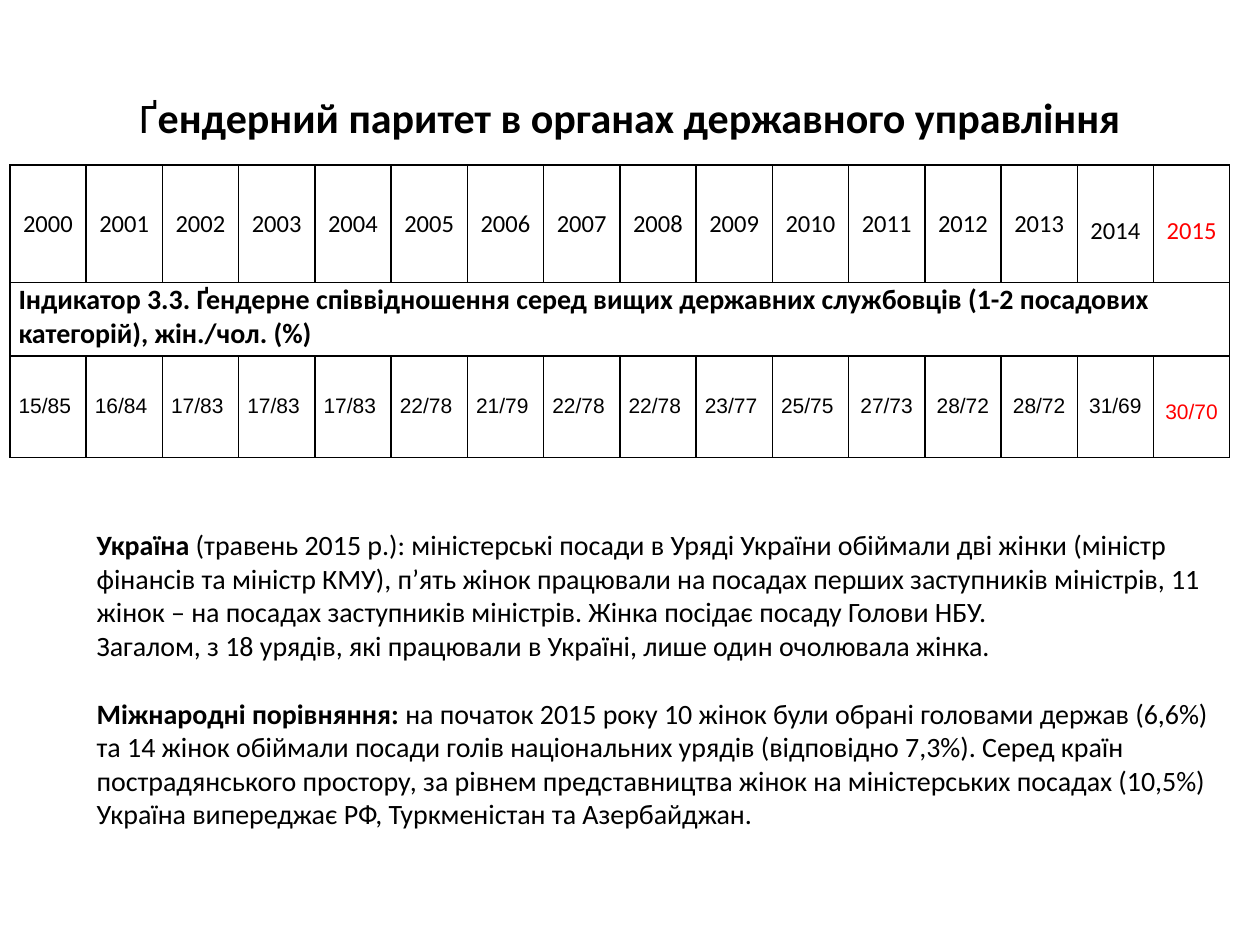
from pptx import Presentation
from pptx.dml.color import RGBColor
from pptx.enum.text import MSO_ANCHOR, MSO_AUTO_SIZE, PP_ALIGN
from pptx.oxml.ns import qn
from pptx.util import Pt
from lxml import etree

LEFT, MID = PP_ALIGN.LEFT, PP_ALIGN.CENTER
TOP, MIDDLE = MSO_ANCHOR.TOP, MSO_ANCHOR.MIDDLE
FIT = MSO_AUTO_SIZE.SHAPE_TO_FIT_TEXT


class Theme:
    font, data_font = "Calibri", "Arial"
    ink, accent = RGBColor(0, 0, 0), RGBColor(255, 0, 0)
    title, body, year, data = 24, 16, 14, 12


# Content: runs are (text, bold)
TITLE = [("Ґ", False), ("ендерний паритет в органах державного управління", True)]
YEARS = [str(year) for year in range(2000, 2016)]
BAND = ("Індикатор 3.3. Ґендерне співвідношення серед вищих державних службовців "
        "(1-2 посадових категорій), жін./чол. (%)")
RATIOS = ["15/85", "16/84", "17/83", "17/83", "17/83", "22/78", "21/79", "22/78",
          "22/78", "23/77", "25/75", "27/73", "28/72", "28/72", "31/69", "30/70"]
# Paragraphs: (runs, space after)
BODY = [
    ([("Україна", True),
      (" (травень 2015 р.): міністерські посади в Уряді України обіймали дві жінки "
       "(міністр фінансів та міністр КМУ), п’ять жінок працювали на посадах перших "
       "заступників міністрів, 11 жінок – на посадах заступників міністрів. "
       "Жінка посідає посаду Голови НБУ.", False)], 0),
    ([("Загалом, з 18 урядів, які працювали в Україні, лише один очолювала жінка.",
       False)], 19.5),
    ([("Міжнародні порівняння:", True),
      (" на початок 2015 року 10 жінок були обрані головами держав (6,6%) та 14 жінок "
       "обіймали посади голів національних урядів (відповідно 7,3%). Серед країн "
       "пострадянського простору, за рівнем представництва жінок на міністерських "
       "посадах (10,5%) Україна випереджає РФ, Туркменістан та Азербайджан.", False)], 0),
]
HEIGHTS = [67, 42, 58]
WIDTH = 697.5
CENTRED = 11  # ratios from this column on are centred


def style(para, size, align=LEFT, color=Theme.ink, font=Theme.font):
    para.alignment = align
    para.font.size, para.font.name = Pt(size), font
    para.font.color.rgb = color


def write(para, runs):
    for text, bold in runs:
        run = para.add_run()
        run.text, run.font.bold = text, bold


def border(cell):
    props = cell._tc.get_or_add_tcPr()
    for at, side in enumerate(("a:lnL", "a:lnR", "a:lnT", "a:lnB")):
        line = etree.Element(qn(side), w=str(Pt(1)))
        fill = etree.SubElement(line, qn("a:solidFill"))
        etree.SubElement(fill, qn("a:srgbClr"), val=str(Theme.ink))
        props.insert(at, line)


def fill(cell, text, size, align, anchor=MIDDLE, drop=0, bold=False, **look):
    cell.text = text
    cell.vertical_anchor = anchor
    cell.margin_left = cell.margin_right = Pt(5)
    cell.margin_top, cell.margin_bottom = Pt(drop), 0
    para = cell.text_frame.paragraphs[0]
    para.space_before = para.space_after = Pt(6)
    para.font.bold = bold
    style(para, size, align, **look)


deck = Presentation()
deck.slide_width, deck.slide_height = Pt(720), Pt(540)
slide = deck.slides.add_slide(deck.slide_layouts[5])

# Title
title = slide.shapes.title
title.left, title.top, title.width, title.height = Pt(36), Pt(21.6), Pt(648), Pt(90)
title.text_frame.vertical_anchor = MIDDLE
head = title.text_frame.paragraphs[0]
style(head, Theme.title, MID)
write(head, TITLE)

# Table
count = len(YEARS)
frame = slide.shapes.add_table(3, count, Pt(5.6), Pt(94.4), Pt(WIDTH), Pt(sum(HEIGHTS)))
table = frame.table
table.first_row = table.horz_banding = False
for row, height in zip(table.rows, HEIGHTS):
    row.height = Pt(height)
for col in table.columns:
    col.width = Pt(WIDTH / count)
for cell in table.iter_cells():
    cell.fill.background()
    border(cell)

# The last columns sit a little lower, and the latest year is red
for i, (year, ratio) in enumerate(zip(YEARS, RATIOS)):
    last = i == count - 1
    color = Theme.accent if last else Theme.ink
    fill(table.cell(0, i), year, Theme.year, MID,
         drop=8 if i >= count - 2 else 0, color=color)
    fill(table.cell(2, i), ratio, Theme.data, MID if i >= CENTRED else LEFT,
         drop=6 if last else 0, color=color, font=Theme.data_font)
table.cell(1, 0).merge(table.cell(1, count - 1))
fill(table.cell(1, 0), BAND, Theme.body, LEFT, anchor=TOP, bold=True)

# Commentary
box = slide.shapes.add_textbox(Pt(48.2), Pt(298), Pt(652.3), Pt(203.8)).text_frame
box.word_wrap, box.auto_size = True, FIT
for i, (runs, gap) in enumerate(BODY):
    para = box.add_paragraph() if i else box.paragraphs[0]
    style(para, Theme.body)
    para.space_after = Pt(gap)
    write(para, runs)

deck.save("out.pptx")
